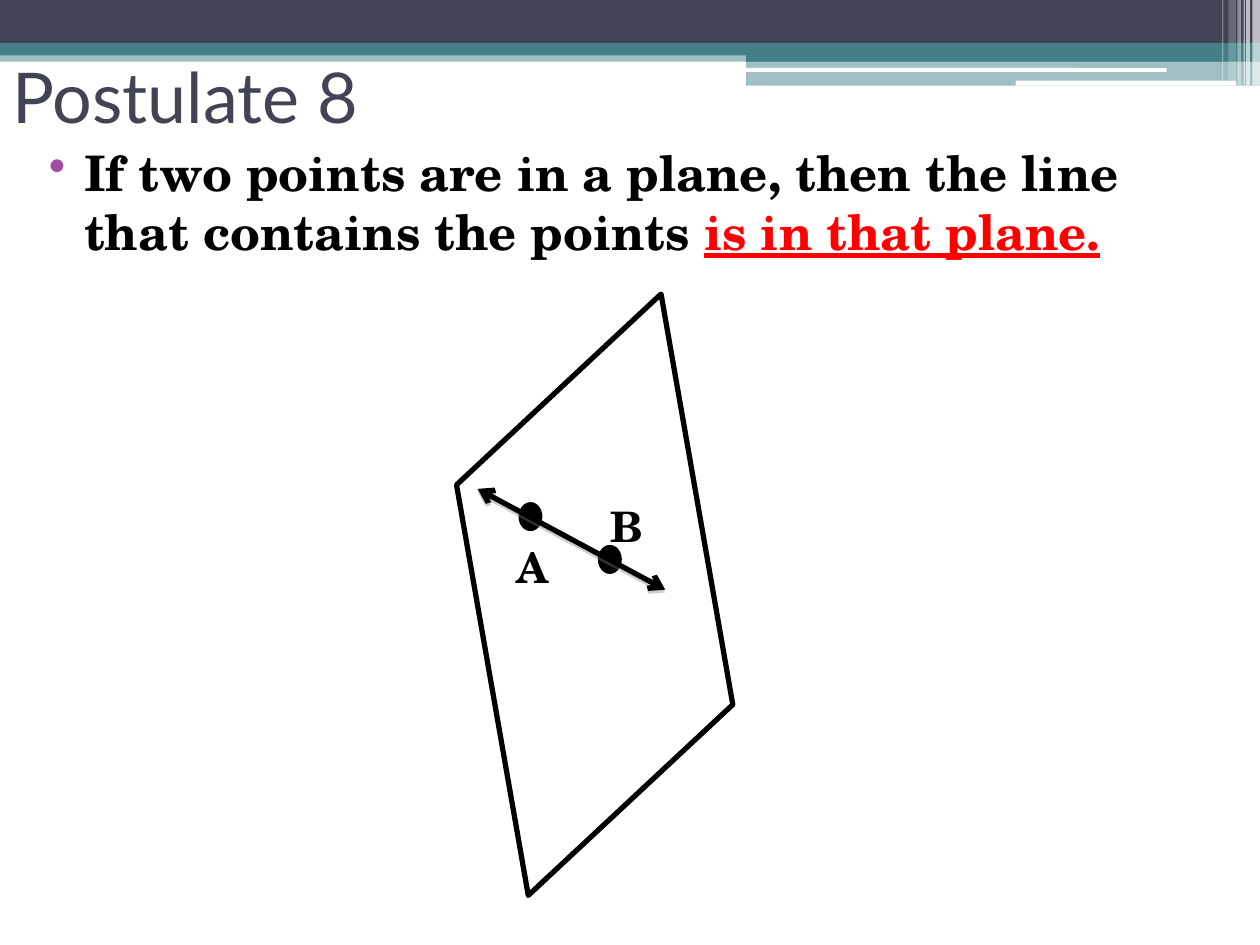
from typing import NamedTuple

from lxml import etree
from pptx import Presentation
from pptx.dml.color import RGBColor
from pptx.enum import shapes, text
from pptx.oxml import ns
from pptx.util import Inches, Pt

BLACK = RGBColor(0x00, 0x00, 0x00)
WHITE = RGBColor(0xFF, 0xFF, 0xFF)
RED = RGBColor(0xFF, 0x00, 0x00)
SLATE = RGBColor(0x42, 0x44, 0x56)
TEAL = RGBColor(0x43, 0x80, 0x86)
PURPLE = RGBColor(0xA0, 0x4D, 0xA3)
TITLE_FONT, BODY_FONT = "Lato", "TeX Gyre Schola"
PRESET = shapes.MSO_SHAPE


class Bar(NamedTuple):
    left: float
    top: float
    width: float
    height: float
    color: RGBColor
    opacity: int = 100
    preset: shapes.MSO_SHAPE = PRESET.RECTANGLE


class PlanePoint(NamedTuple):
    name: str
    left: float
    top: float
    label_left: float
    label_top: float


BARS = [
    Bar(0, 0.4, 10, 0.09, TEAL, 50),
    Bar(0, 0, 10, 0.34, SLATE),
    Bar(0, 0.34, 10, 0.1, TEAL),
    Bar(5.92, 0.39, 4.08, 0.1, TEAL),
    Bar(5.92, 0.48, 4.08, 0.2, TEAL, 50),
    Bar(5.91, 0.54, 3.35, 0.03, WHITE, preset=PRESET.ROUNDED_RECTANGLE),
    Bar(8.06, 0.64, 1.75, 0.04, WHITE, preset=PRESET.ROUNDED_RECTANGLE),
    Bar(9.94, 0, 0.06, 0.68, WHITE, 65),
    Bar(9.89, 0, 0.03, 0.68, WHITE, 65),
    Bar(9.87, 0, 0.01, 0.68, WHITE, 60),
    Bar(9.82, 0, 0.03, 0.68, WHITE, 40),
    Bar(9.75, 0, 0.06, 0.64, WHITE, 20),
    Bar(9.7, 0, 0.01, 0.64, WHITE, 30),
]
POINTS = [
    PlanePoint("B", 4.75, 4.33, 4.75, 3.92),
    PlanePoint("A", 4.12, 3.99, 4, 4.25),
]


def add_xml(parent, tag: str, **attributes: str):
    return etree.SubElement(parent, ns.qn(tag), attributes)


def place(shape, left: float, top: float, width: float, height: float) -> None:
    shape.left, shape.top = Inches(left), Inches(top)
    shape.width, shape.height = Inches(width), Inches(height)


def format_run(run, font: str, size: float, color: RGBColor, bold: bool = False) -> None:
    run.font.name, run.font.size, run.font.bold = font, Pt(size), bold
    run.font.color.rgb = color


def draw_bar(slide, bar: Bar) -> None:
    band = slide.shapes.add_shape(bar.preset, *map(Inches, bar[:4]))
    band.shadow.inherit = False
    band.line.fill.background()
    band.fill.solid()
    band.fill.fore_color.rgb = bar.color
    if bar.opacity < 100:
        color = band._element.spPr.find(".//" + ns.qn("a:srgbClr"))
        add_xml(color, "a:alpha", val=str(bar.opacity * 1000))


def draw_point(slide, point: PlanePoint) -> None:
    dot = slide.shapes.add_shape(PRESET.OVAL, Inches(point.left), Inches(point.top),
                                 Inches(0.18), Inches(0.22))
    dot.shadow.inherit = False
    dot.fill.solid()
    dot.fill.fore_color.rgb = dot.line.color.rgb = BLACK
    dot.line.width = Pt(0.75)
    label = slide.shapes.add_textbox(Inches(point.label_left), Inches(point.label_top),
                                     Inches(0.37), Inches(0.5))
    label.text_frame.text = point.name
    format_run(label.text_frame.paragraphs[0].runs[0], BODY_FONT, 24, BLACK, True)


def draw_plane(slide) -> None:
    plane = slide.shapes.add_shape(PRESET.PARALLELOGRAM, Inches(2.46), Inches(3.79),
                                   Inches(4.52), Inches(1.86))
    plane.adjustments[0] = 0.652
    plane.rotation = 80.1
    plane._element.spPr.xfrm.set("flipH", "1")
    plane.shadow.inherit = False
    plane.fill.background()
    plane.line.color.rgb = BLACK
    plane.line.width = Pt(3)


def draw_line(slide) -> None:
    line = slide.shapes.add_connector(shapes.MSO_CONNECTOR.STRAIGHT, Inches(3.79),
                                      Inches(3.88), Inches(5.28), Inches(4.68))
    line.line.color.rgb = BLACK
    line.line.width = Pt(3)
    stroke = line.line._get_or_add_ln()
    for end in ("a:headEnd", "a:tailEnd"):
        add_xml(stroke, end, type="arrow")
    effects = add_xml(line._element.spPr, "a:effectLst")
    shadow = add_xml(effects, "a:outerShdw", blurRad="0", dist=str(Pt(1.6)),
                     dir="5400000", rotWithShape="0")
    gray = add_xml(shadow, "a:srgbClr", val="808080")
    add_xml(gray, "a:alpha", val="38000")


def write_title(slide) -> None:
    title = slide.shapes.title
    place(title, 0, 0.17, 9, 1.17)
    title.text_frame.text = "Postulate 8"
    title.text_frame.vertical_anchor = text.MSO_ANCHOR.MIDDLE
    heading = title.text_frame.paragraphs[0]
    heading.alignment = text.PP_ALIGN.LEFT
    format_run(heading.runs[0], TITLE_FONT, 40, SLATE)


def write_postulate(slide) -> None:
    box = slide.shapes.add_textbox(Inches(0.17), Inches(1.08), Inches(9), Inches(1.33))
    box.text_frame.word_wrap = True
    postulate = box.text_frame.paragraphs[0]
    postulate.text = "If two points are in a plane, then the line that contains the points "
    postulate.space_before = Pt(3)
    conclusion = postulate.add_run()
    conclusion.text = "is in that plane."
    for run, color in zip(postulate.runs, (BLACK, RED)):
        format_run(run, BODY_FONT, 28, color, True)
    conclusion.font.underline = True
    # Hanging bullet
    properties = postulate._p.get_or_add_pPr()
    properties.set("marL", str(Inches(0.4)))
    properties.set("indent", str(Inches(-0.28)))
    add_xml(add_xml(properties, "a:buClr"), "a:srgbClr", val=str(PURPLE))
    add_xml(properties, "a:buChar", char="•")


def main() -> None:
    deck = Presentation()
    deck.slide_width, deck.slide_height = Inches(10), Inches(7.5)
    slide = deck.slides.add_slide(deck.slide_layouts.get_by_name("Title Only"))
    # Header decoration
    for bar in BARS:
        draw_bar(slide, bar)
    # Plane with the line through A and B
    for point in POINTS:
        draw_point(slide, point)
    draw_plane(slide)
    draw_line(slide)
    # Wording
    write_title(slide)
    write_postulate(slide)
    deck.save("out.pptx")


if __name__ == "__main__":
    main()
